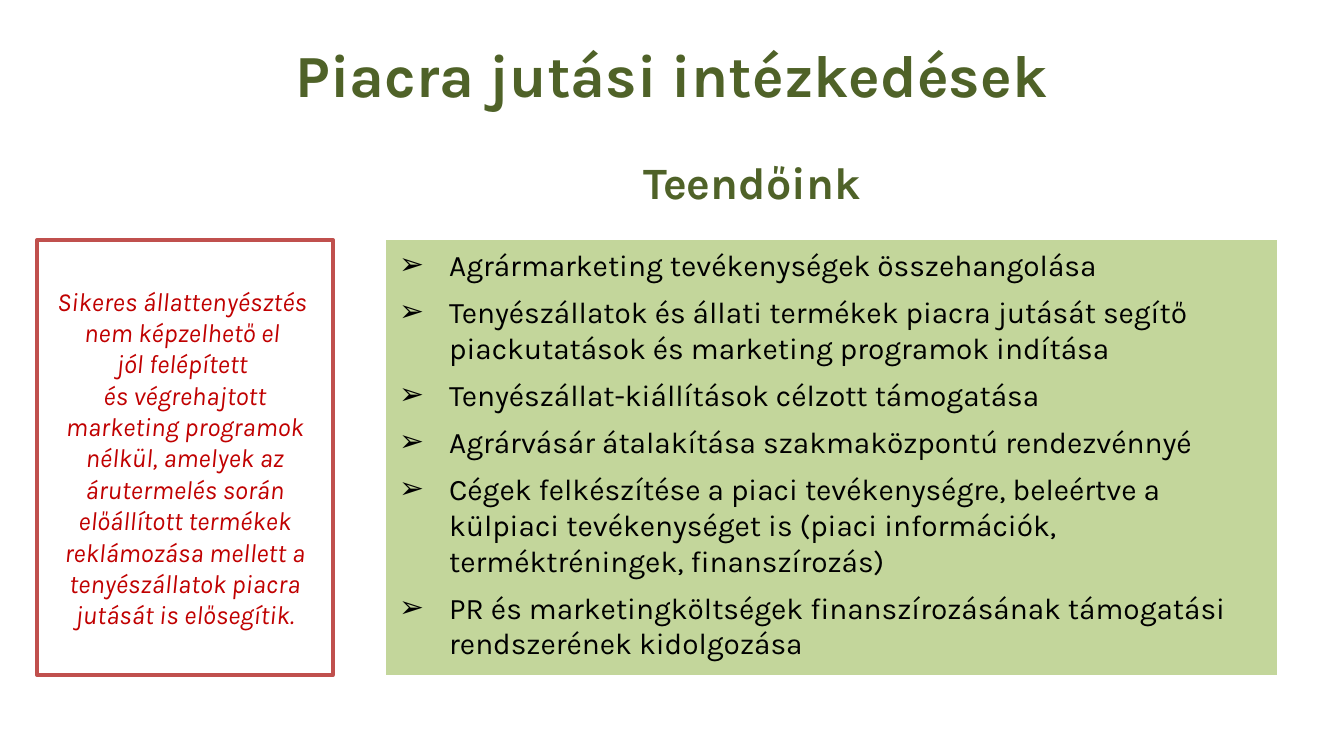
import pptx
import pptx.util
import pptx.dml.color
import pptx.enum.shapes
import pptx.enum.text
from lxml import etree

RGBColor = pptx.dml.color.RGBColor
Pt = pptx.util.Pt
ALIGN = pptx.enum.text.PP_ALIGN
ANCHOR = pptx.enum.text.MSO_ANCHOR

GREEN = RGBColor(0x4F, 0x62, 0x28)
LIGHT_GREEN = RGBColor(0xC3, 0xD6, 0x9B)
RED = RGBColor(0xC0, 0x00, 0x00)
BORDER_RED = RGBColor(0xC0, 0x50, 0x4D)
WHITE = RGBColor(0xFF, 0xFF, 0xFF)
BLACK = RGBColor(0x00, 0x00, 0x00)
FONT = "Karla"

# Content
TITLE = "Piacra jutási intézkedések"
SUBTITLE = "Teendőink"
QUOTE = [
    "Sikeres állattenyésztés ",
    "nem képzelhető el ",
    "jól felépített ",
    "és végrehajtott marketing programok nélkül, amelyek az árutermelés "
    "során előállított termékek reklámozása mellett a tenyészállatok "
    "piacra jutását is elősegítik.",
]
TASKS = [
    "Agrármarketing tevékenységek összehangolása",
    "Tenyészállatok és állati termékek piacra jutását segítő piackutatások "
    "és marketing programok indítása",
    "Tenyészállat-kiállítások célzott támogatása",
    "Agrárvásár átalakítása szakmaközpontú rendezvénnyé",
    "Cégek felkészítése a piaci tevékenységre, beleértve a külpiaci "
    "tevékenységet is (piaci információk, terméktréningek, finanszírozás)",
    "PR és marketingköltségek finanszírozásának támogatási rendszerének "
    "kidolgozása",
]

# Layout in px
SLIDE_W, SLIDE_H = 1344, 756
PANEL_TOP, PANEL_H = 240, 435
INDENT = 50


def px(n):
    return round(n * 914400 / 134.4)


prs = pptx.Presentation()
prs.slide_width, prs.slide_height = px(SLIDE_W), px(SLIDE_H)
s = prs.slides.add_slide(prs.slide_layouts[6])


def set_frame(sp, anchor):
    tf = sp.text_frame
    tf.word_wrap = True
    tf.vertical_anchor = anchor
    return tf


def add_text(x, y, w, h, anchor):
    return set_frame(s.shapes.add_textbox(px(x), px(y), px(w), px(h)), anchor)


def add_panel(x, w, fill, anchor, line=None):
    sp = s.shapes.add_shape(pptx.enum.shapes.MSO_SHAPE.RECTANGLE,
                            px(x), px(PANEL_TOP), px(w), px(PANEL_H))
    sp.shadow.inherit = False
    sp.fill.solid()
    sp.fill.fore_color.rgb = fill
    if line is None:
        sp.line.fill.background()
    else:
        sp.line.color.rgb = line
        sp.line.width = Pt(2)
    return set_frame(sp, anchor)


def add_run(p, text, size, color, bold=False, italic=False):
    r = p.add_run()
    r.text = text
    r.font.name, r.font.size = FONT, Pt(size)
    r.font.bold, r.font.italic = bold, italic
    r.font.color.rgb = color


def add_bullet(p, char):
    pPr = p._p.get_or_add_pPr()
    pPr.set("marL", str(px(INDENT)))
    pPr.set("indent", str(-px(INDENT)))
    ns = pptx.oxml.ns.qn
    etree.SubElement(pPr, ns("a:buFont")).set("typeface", "Arial")
    etree.SubElement(pPr, ns("a:buChar")).set("char", char)


# Title
p = add_text(67, 31, 1210, 126, ANCHOR.TOP).paragraphs[0]
p.alignment = ALIGN.CENTER
add_run(p, TITLE, 32, GREEN, bold=True)

# Quote panel
p = add_panel(37, 296, WHITE, ANCHOR.MIDDLE, BORDER_RED).paragraphs[0]
p.alignment = ALIGN.CENTER
for i, text in enumerate(QUOTE):
    if i:
        p.add_line_break()
    add_run(p, text, 14, RED, italic=True)

# Heading above the task list
p = add_text(630, 145, 594, 70, ANCHOR.BOTTOM).paragraphs[0]
p.alignment = ALIGN.LEFT
add_run(p, SUBTITLE, 24, GREEN, bold=True)

# Task list panel
tf = add_panel(386, 891, LIGHT_GREEN, ANCHOR.TOP)
for i, task in enumerate(TASKS):
    p = tf.add_paragraph() if i else tf.paragraphs[0]
    p.alignment = ALIGN.LEFT
    if i:
        p.space_before = Pt(6)
    add_bullet(p, "➢")
    add_run(p, task, 16, BLACK)

prs.save("out.pptx")
